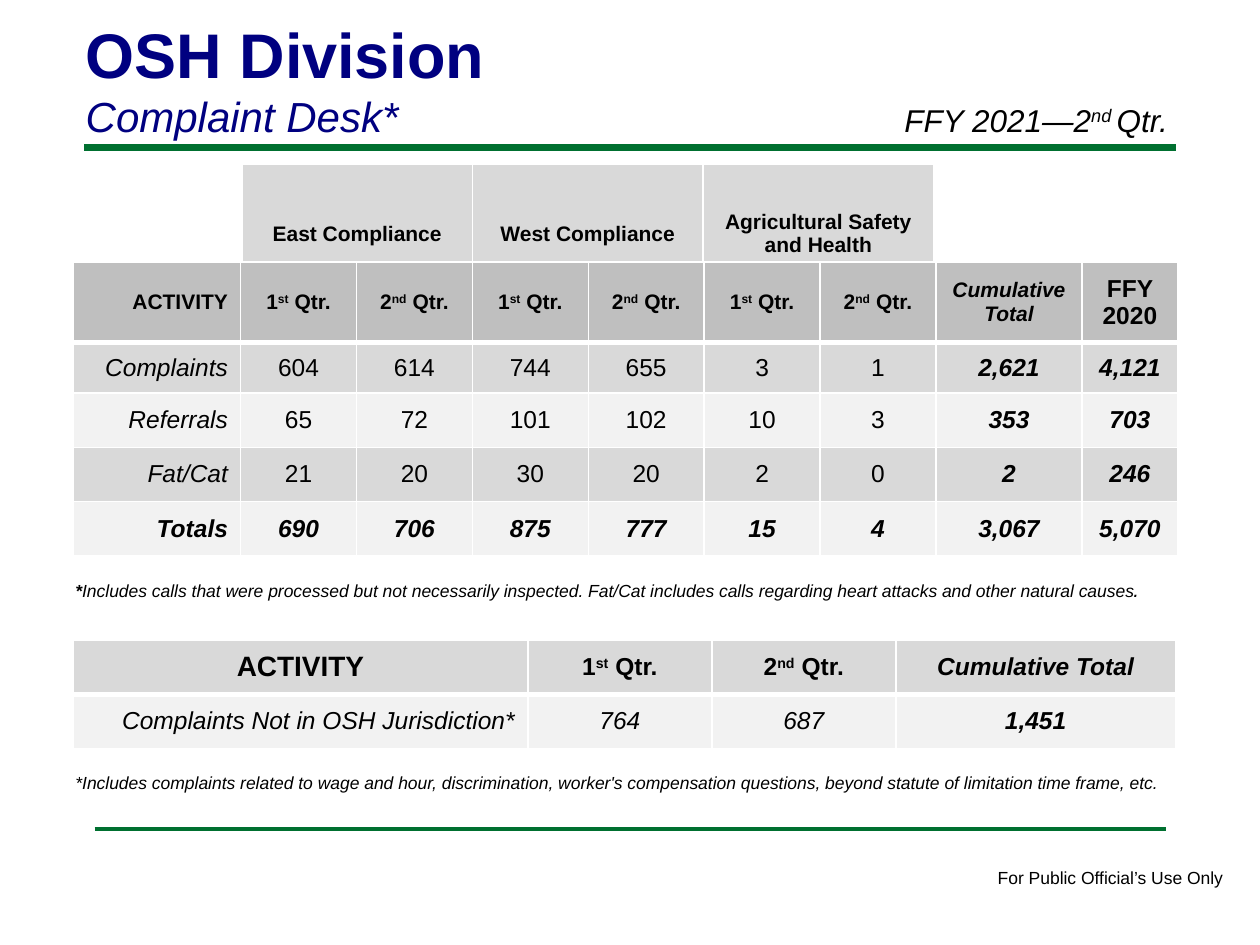
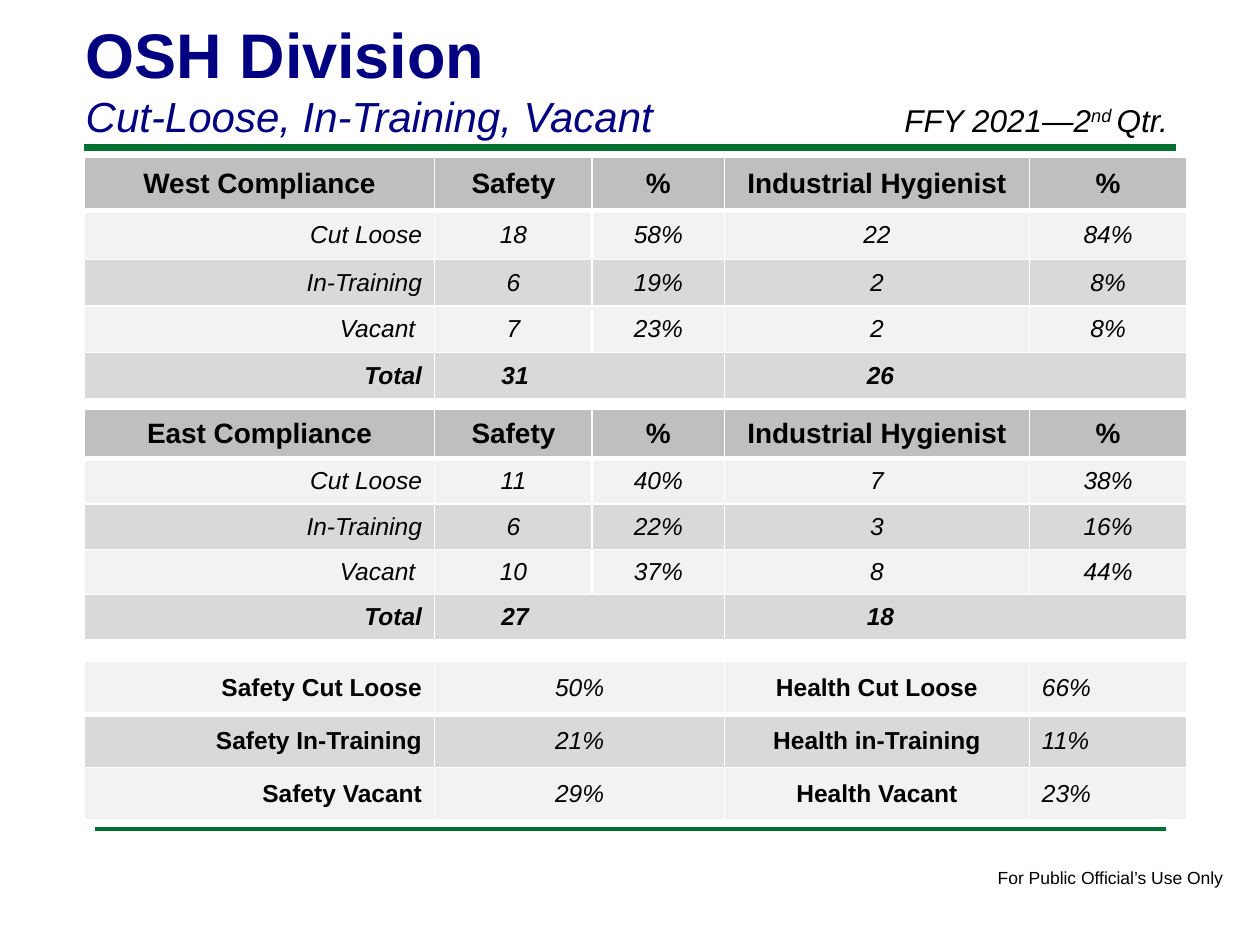
import pptx
import pptx.util
import pptx.dml.color
import pptx.enum.shapes
import pptx.enum.text
import pptx.oxml
import pptx.oxml.ns

Inches, Pt = pptx.util.Inches, pptx.util.Pt
RGBColor = pptx.dml.color.RGBColor
ALIGN = pptx.enum.text.PP_ALIGN
ANCHOR = pptx.enum.text.MSO_ANCHOR

# Shared look
FONT = "Arial"
BLACK = RGBColor(0x00, 0x00, 0x00)
WHITE = RGBColor(0xFF, 0xFF, 0xFF)
NAVY = RGBColor(0x00, 0x00, 0x80)
GREEN = RGBColor(0x00, 0x70, 0x30)
DARK = RGBColor(0xBF, 0xBF, 0xBF)
MID = RGBColor(0xD9, 0xD9, 0xD9)
LIGHT = RGBColor(0xF2, 0xF2, 0xF2)

QUARTERS = ["1^st^ Qtr.", "2^nd^ Qtr."]
TITLE_ONLY = 5


def write_text(para, text, *, size=14, bold=False, italic=False, color=BLACK, align=None):
    """Add text to a paragraph; parts between ^ marks are superscript."""
    if align is not None:
        para.alignment = align
    for index, part in enumerate(text.split("^")):
        if not part:
            continue
        span = para.add_run()
        span.text = part
        span.font.name = FONT
        span.font.size = Pt(size)
        span.font.bold = bold
        span.font.italic = italic
        span.font.color.rgb = color
        if index % 2:
            span.font._element.set("baseline", "30000")


def add_text_box(page, box, *, wrap=True):
    """Add an empty text box and return its first paragraph."""
    frame = page.shapes.add_textbox(*map(Inches, box)).text_frame
    frame.word_wrap = wrap
    frame.auto_size = pptx.enum.text.MSO_AUTO_SIZE.SHAPE_TO_FIT_TEXT
    return frame.paragraphs[0]


def add_rule(page, left, right, top, width):
    rule = page.shapes.add_connector(
        pptx.enum.shapes.MSO_CONNECTOR.STRAIGHT,
        Inches(left), Inches(top), Inches(right), Inches(top))
    rule.line.color.rgb = GREEN
    rule.line.width = Pt(width)
    rule._element.spPr.append(pptx.oxml.parse_xml(
        f"<a:effectLst {pptx.oxml.ns.nsdecls('a')}/>"))


def add_page(deck, subtitle):
    """Add a slide with the title, period, green rules and footer."""
    page = deck.slides.add_slide(deck.slide_layouts[TITLE_ONLY])
    add_rule(page, 0.67, 9.33, 1.17, 4)
    add_rule(page, 0.75, 9.25, 6.58, 2)

    title = page.shapes.title
    title.left, title.top, title.width, title.height = map(Inches, (0.58, 0.06, 8.25, 1.11))
    frame = title.text_frame
    frame.word_wrap = True
    frame.auto_size = pptx.enum.text.MSO_AUTO_SIZE.NONE
    frame.vertical_anchor = ANCHOR.BOTTOM
    write_text(frame.paragraphs[0], "OSH Division", size=36, bold=True,
               color=NAVY, align=ALIGN.LEFT)
    write_text(frame.add_paragraph(), subtitle, size=24, italic=True,
               color=NAVY, align=ALIGN.LEFT)

    write_text(add_text_box(page, (7.08, 0.75, 2.5, 0.4)),
               "FFY 2021—2^nd ^Qtr.", size=18, italic=True)
    write_text(add_text_box(page, (7.82, 6.83, 2.01, 0.27), wrap=False),
               "For Public Official’s Use Only", size=10)
    return page


def set_borders(cell, top, bottom):
    """Draw white cell edges, with widths in points."""
    properties = cell._tc.get_or_add_tcPr()
    for side, width in (("L", 1), ("R", 1), ("T", top), ("B", bottom)):
        properties.append(pptx.oxml.parse_xml(
            f"<a:ln{side} {pptx.oxml.ns.nsdecls('a')} w='{Pt(width)}'>"
            f"<a:solidFill><a:srgbClr val='{WHITE}'/></a:solidFill></a:ln{side}>"))


def add_grid(page, left, top, widths, heights, rows, fills, style_of):
    """Add a table; style_of(row, column) gives the text format of a cell."""
    table = page.shapes.add_table(
        len(rows), len(widths), Inches(left), Inches(top),
        Inches(sum(widths)), Inches(sum(heights))).table
    table.horz_banding = False
    for column, width in zip(table.columns, widths):
        column.width = Inches(width)
    for r, (height, texts, fill) in enumerate(zip(heights, rows, fills)):
        table.rows[r].height = Inches(height)
        for c, text in enumerate(texts):
            cell = table.cell(r, c)
            set_borders(cell, top=3 if r == 1 else 1, bottom=3 if r == 0 else 1)
            cell.fill.solid()
            cell.fill.fore_color.rgb = fill
            cell.vertical_anchor = ANCHOR.MIDDLE
            write_text(cell.text_frame.paragraphs[0], text, **style_of(r, c))
    return table


# Complaint desk
def region_style(row, column):
    return dict(size=12, bold=True, align=ALIGN.CENTER)


def desk_style(row, column):
    align = ALIGN.CENTER if column else ALIGN.RIGHT
    if row == 0:
        return dict(size=14 if column == 8 else 12, bold=True,
                    italic=column == 7, align=align)
    summary = row == 4 or column >= 7
    return dict(bold=summary, italic=summary or column == 0, align=align)


def outside_style(row, column):
    return dict(size=16 if row == column == 0 else 14,
                bold=row == 0 or column == 3, italic=row == 1 or column == 3,
                align=ALIGN.RIGHT if (row, column) == (1, 0) else ALIGN.CENTER)


def add_desk_tables(page, left, top):
    """Compliance regions above the activity counts."""
    regions = add_grid(
        page, left + 1.34, top, [1.83] * 3, [0.95],
        [["East Compliance", "West Compliance", "Agricultural Safety and Health"]],
        [MID], region_style)
    for cell in regions.iter_cells():
        cell.margin_top = Inches(0.21)
    add_grid(
        page, left, top + 0.78, [1.33] + [0.92] * 6 + [1.16, 0.76],
        [0.64, 0.4] + [0.43] * 3,
        [["ACTIVITY", *QUARTERS * 3, "Cumulative Total", "FFY 2020"],
         ["Complaints", "604", "614", "744", "655", "3", "1", "2,621", "4,121"],
         ["Referrals", "65", "72", "101", "102", "10", "3", "353", "703"],
         ["Fat/Cat", "21", "20", "30", "20", "2", "0", "2", "246"],
         ["Totals", "690", "706", "875", "777", "15", "4", "3,067", "5,070"]],
        [DARK, MID, LIGHT, MID, LIGHT], desk_style)


def build_complaint_desk(deck):
    page = add_page(deck, "Complaint Desk*")
    add_desk_tables(page, 0.58, 1.3)

    note = add_text_box(page, (0.5, 4.53, 8.83, 0.3))
    write_text(note, "*", size=10, bold=True, italic=True)
    write_text(note, "Includes calls that were processed but not necessarily inspected. "
               "Fat/Cat includes calls regarding heart attacks and other natural causes",
               size=10, italic=True)
    write_text(note, ".", size=12, italic=True)

    add_grid(page, 0.58, 5.08, [3.61, 1.46, 1.46, 2.22], [0.43] * 2,
             [["ACTIVITY", *QUARTERS, "Cumulative Total"],
              ["Complaints Not in OSH Jurisdiction*", "764", "687", "1,451"]],
             [MID, LIGHT], outside_style)
    write_text(add_text_box(page, (0.5, 6.08, 8.92, 0.27)),
               "*Includes complaints related to wage and hour, discrimination, worker's "
               "compensation questions, beyond statute of limitation time frame, etc.",
               size=10, italic=True)


# Staffing
def staff_style(row, column):
    if row == 0:
        return dict(size=16, bold=True, align=ALIGN.CENTER)
    align = ALIGN.CENTER if column else ALIGN.RIGHT
    if row == 4 and column:
        align = ALIGN.LEFT
    return dict(bold=row == 4, italic=True, align=align)


def share_style(row, column):
    label = column % 2 == 0
    return dict(bold=label, italic=not label,
                align=(ALIGN.RIGHT, ALIGN.CENTER, ALIGN.CENTER, ALIGN.LEFT)[column])


def add_staff_table(page, top, heights, region, counts, totals):
    labels = ["Cut Loose", "In-Training", "Vacant "]
    safety_total, hygienist_total = totals
    table = add_grid(
        page, 0.67, top, [2.78, 1.25, 1.05, 2.42, 1.25], heights,
        [[region, "Safety", "%", "Industrial Hygienist", "%"],
         *([label, *values] for label, values in zip(labels, counts)),
         ["Total", safety_total, "", hygienist_total, ""]],
        [DARK, LIGHT, MID, LIGHT, MID], staff_style)
    # Each total spans its count and percentage columns
    for column, indent in ((1, 0.53), (3, 1.13)):
        total = table.cell(4, column)
        total.merge(table.cell(4, column + 1))
        total.margin_left = Inches(indent)


def build_staffing(deck):
    page = add_page(deck, "Cut-Loose, In-Training, Vacant")
    add_staff_table(page, 1.25, [0.42, 0.39] + [0.37] * 3, "West Compliance",
                    [["18", "58%", "22", "84%"],
                     ["6", "19%", "2", "8%"],
                     ["7", "23%", "2", "8%"]], ["31", "26"])
    add_staff_table(page, 3.25, [0.39] + [0.36] * 4, "East Compliance",
                    [["11", "40%", "7", "38%"],
                     ["6", "22%", "3", "16%"],
                     ["10", "37%", "8", "44%"]], ["27", "18"])
    add_grid(page, 0.67, 5.25, [2.78, 2.3, 2.42, 1.25], [0.42] * 3,
             [["Safety Cut Loose", "50%", "Health Cut Loose", "66%"],
              ["Safety In-Training", "21%", "Health in-Training", "11%"],
              ["Safety Vacant", "29%", "Health Vacant", "23%"]],
             [LIGHT, MID, LIGHT], share_style)


def main():
    deck = pptx.Presentation()
    deck.slide_width, deck.slide_height = Inches(10), Inches(7.5)
    build_complaint_desk(deck)
    build_staffing(deck)
    deck.save("out.pptx")


if __name__ == "__main__":
    main()
